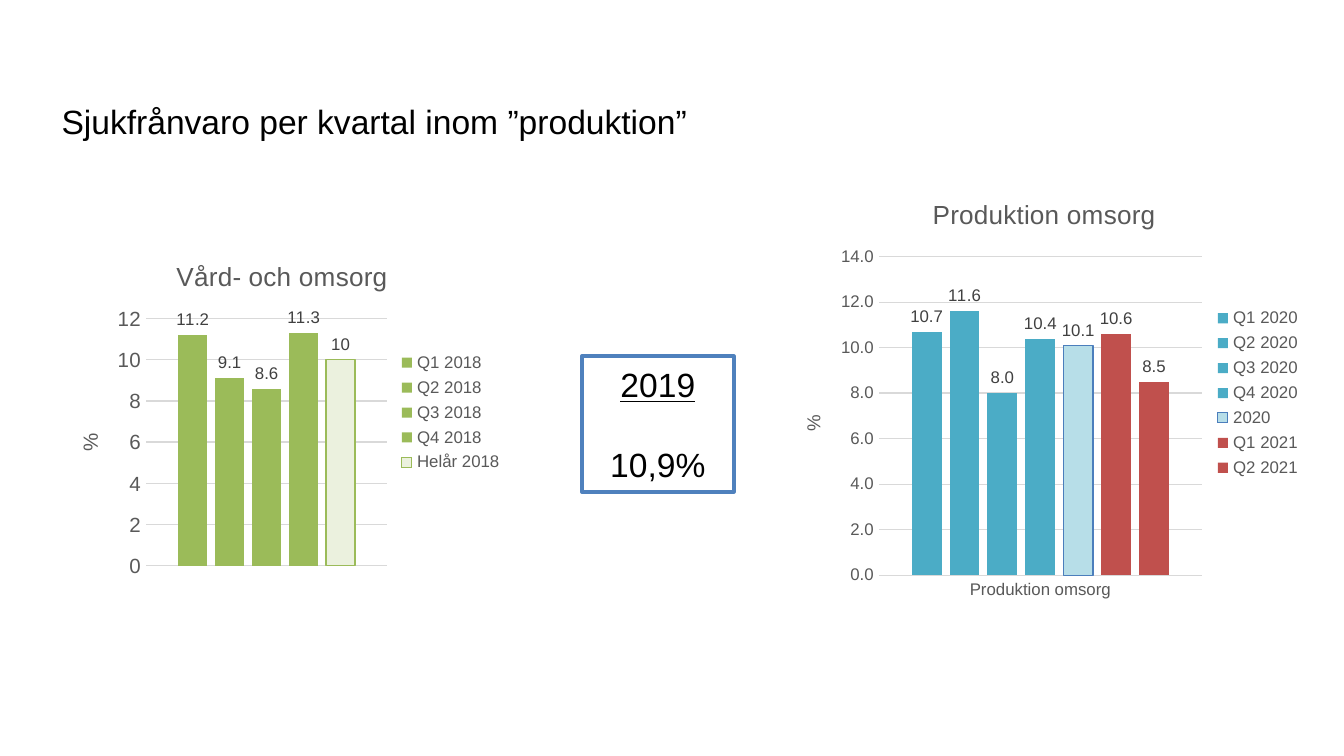
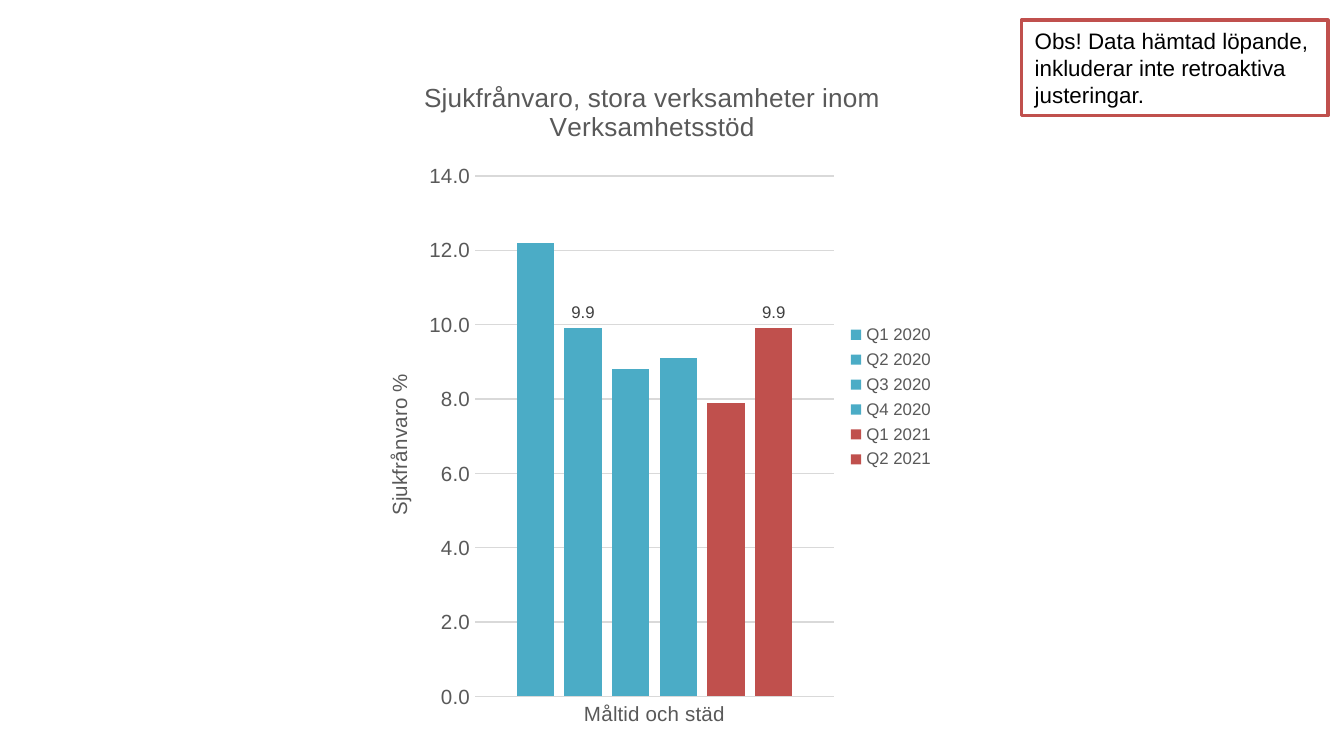
from dataclasses import dataclass

from pptx import Presentation
from pptx.chart.data import CategoryChartData
from pptx.dml.color import RGBColor
from pptx.enum.chart import XL_CHART_TYPE, XL_LABEL_POSITION, XL_LEGEND_POSITION, XL_TICK_MARK
from pptx.enum.shapes import MSO_SHAPE
from pptx.enum.text import MSO_ANCHOR, MSO_AUTO_SIZE, PP_ALIGN
from pptx.util import Inches, Pt

CLUSTERED = XL_CHART_TYPE.COLUMN_CLUSTERED
OUTSIDE_END = XL_LABEL_POSITION.OUTSIDE_END
LEGEND_RIGHT = XL_LEGEND_POSITION.RIGHT
NO_TICK = XL_TICK_MARK.NONE
RECTANGLE = MSO_SHAPE.RECTANGLE
MIDDLE = MSO_ANCHOR.MIDDLE
GROW = MSO_AUTO_SIZE.SHAPE_TO_FIT_TEXT
LEFT, CENTER = PP_ALIGN.LEFT, PP_ALIGN.CENTER


@dataclass(frozen=True)
class Theme:
    font: str = "Arial"
    black: str = "000000"
    white: str = "FFFFFF"
    grey: str = "595959"
    label: str = "404040"
    grid: str = "D9D9D9"
    green: str = "9BBB59"
    pale_green: str = "EBF1DE"
    teal: str = "4BACC6"
    pale_teal: str = "B7DEE8"
    red: str = "C0504D"
    blue: str = "4F81BD"
    pale_edge: str = "4B7EBC"
    heading: int = 18
    chart_title: int = 14
    note: int = 12
    axis: int = 11
    body: int = 10
    small: int = 9
    thin: float = 0.75
    frame: int = 2


THEME = Theme()
CELL = Inches(0.1)


@dataclass(frozen=True)
class Bar:
    name: str
    value: float
    fill: str
    edge: str = ""
    labelled: bool = True


def color(code):
    return RGBColor.from_string(code)


def place(*cells):
    return [round(cell * CELL) for cell in cells]


def style_font(font, size, code):
    font.name = THEME.font
    font.size = Pt(size)
    font.bold = False
    font.color.rgb = color(code)


def style_line(line, code, width):
    line.color.rgb = color(code)
    line.width = Pt(width)


def write(frame, lines, size, align=LEFT, gap=0):
    frame.word_wrap = True
    frame.auto_size = GROW
    frame.text = "\n".join(lines)
    for index, para in enumerate(frame.paragraphs):
        para.alignment = align
        if index:
            para.space_before = Pt(gap)
        for span in para.runs:
            style_font(span.font, size, THEME.black)


def add_heading(page, cells, text):
    box = page.shapes.add_textbox(*place(*cells))
    write(box.text_frame, [text], THEME.heading)


def add_framed_box(page, cells, lines, size, edge, align=LEFT, gap=0):
    box = page.shapes.add_shape(RECTANGLE, *place(*cells))
    box.shadow.inherit = False
    box.fill.solid()
    box.fill.fore_color.rgb = color(THEME.white)
    style_line(box.line, edge, THEME.frame)
    box.text_frame.vertical_anchor = MIDDLE
    write(box.text_frame, lines, size, align, gap)
    return box


def set_title(owner, text, size):
    frame = (owner.chart_title if hasattr(owner, "chart_title") else owner.axis_title).text_frame
    frame.text = text
    style_font(frame.paragraphs[0].runs[0].font, size, THEME.grey)


def style_axis(axis, size):
    axis.major_tick_mark = NO_TICK
    axis.minor_tick_mark = NO_TICK
    style_font(axis.tick_labels.font, size, THEME.grey)


def style_bar(series, bar, number_format):
    series.format.fill.solid()
    series.format.fill.fore_color.rgb = color(bar.fill)
    series.invert_if_negative = False
    if bar.edge:
        style_line(series.format.line, bar.edge, THEME.thin)
    if bar.labelled:
        labels = series.data_labels
        labels.show_value = True
        labels.position = OUTSIDE_END
        labels.number_format = number_format
        labels.number_format_is_linked = False
        style_font(labels.font, THEME.small, THEME.label)


def add_column_chart(page, cells, title, category, bars, top, axis_title, tick_size,
                     axis_title_size=THEME.axis, number_format="0.0", show_category=True):
    data = CategoryChartData()
    data.categories = [category]
    for bar in bars:
        data.add_series(bar.name, [bar.value])
    chart = page.shapes.add_chart(CLUSTERED, *place(*cells), data).chart
    style_font(chart.font, THEME.body, THEME.black)
    chart.has_title = True
    set_title(chart, title, THEME.chart_title)
    chart.chart_title.include_in_layout = False
    chart.has_legend = True
    chart.legend.position = LEGEND_RIGHT
    chart.legend.include_in_layout = False
    style_font(chart.legend.font, THEME.small, THEME.grey)

    plot = chart.plots[0]
    plot.gap_width = 219
    plot.overlap = -27
    plot.vary_by_categories = False
    for series, bar in zip(plot.series, bars):
        style_bar(series, bar, number_format)

    across, upward = chart.category_axis, chart.value_axis
    style_axis(across, tick_size)
    style_line(across.format.line, THEME.grid, THEME.thin)
    across.visible = show_category
    style_axis(upward, tick_size)
    upward.format.line.fill.background()
    upward.minimum_scale = 0
    upward.maximum_scale = top
    upward.major_unit = 2
    upward.tick_labels.number_format = number_format
    upward.tick_labels.number_format_is_linked = False
    style_line(upward.major_gridlines.format.line, THEME.grid, THEME.thin)
    set_title(upward, axis_title, axis_title_size)


def quarters(year, values, fill, labelled=None):
    return [Bar(f"Q{number} {year}", value, fill,
                labelled=labelled is None or number in labelled)
            for number, value in enumerate(values, 1)]


def build_production_page(page):
    add_heading(page, (3.6, 7, 56.7, 4), "Sjukfrånvaro per kvartal inom ”produktion”")
    care = quarters(2018, [11.2, 9.1, 8.6, 11.3], THEME.green)
    care.append(Bar("Helår 2018", 10, THEME.pale_green, THEME.green))
    add_column_chart(page, (3.6, 17.9, 34.8, 25.6), "Vård- och omsorg", "1", care, 12, "%",
                     THEME.axis, number_format="General", show_category=False)
    box = add_framed_box(page, (43.3, 26.5, 11.3, 10.1), ["2019", "10,9%"],
                         THEME.heading, THEME.blue, CENTER, gap=21)
    box.text_frame.paragraphs[0].runs[0].font.underline = True
    production = quarters(2020, [10.7, 11.6, 8, 10.4], THEME.teal)
    production.append(Bar("2020", 10.1, THEME.pale_teal, THEME.pale_edge))
    production += quarters(2021, [10.6, 8.5], THEME.red)
    add_column_chart(page, (57.6, 13.2, 40.2, 32.1), "Produktion omsorg", "Produktion omsorg",
                     production, 14, "%", THEME.small, THEME.body, "#,##0.0")


def build_support_page(page):
    support = quarters(2020, [12.2, 9.9, 8.8, 9.1], THEME.teal, labelled=[2])
    support += quarters(2021, [7.9, 9.9], THEME.red, labelled=[2])
    add_column_chart(page, (26.6, 4.1, 43.9, 50.9),
                     "Sjukfrånvaro, stora verksamheter inom Verksamhetsstöd",
                     "Måltid och städ", support, 14, "Sjukfrånvaro %", THEME.axis)
    add_framed_box(page, (76, 1.5, 22.8, 7.1),
                   ["Obs! Data hämtad löpande, inkluderar inte retroaktiva justeringar."],
                   THEME.note, THEME.red)


def main():
    deck = Presentation()
    deck.slide_width = 100 * CELL
    deck.slide_height = round(56.25 * CELL)
    for build in (build_production_page, build_support_page):
        build(deck.slides.add_slide(deck.slide_layouts[6]))
    deck.save("out.pptx")


if __name__ == "__main__":
    main()
